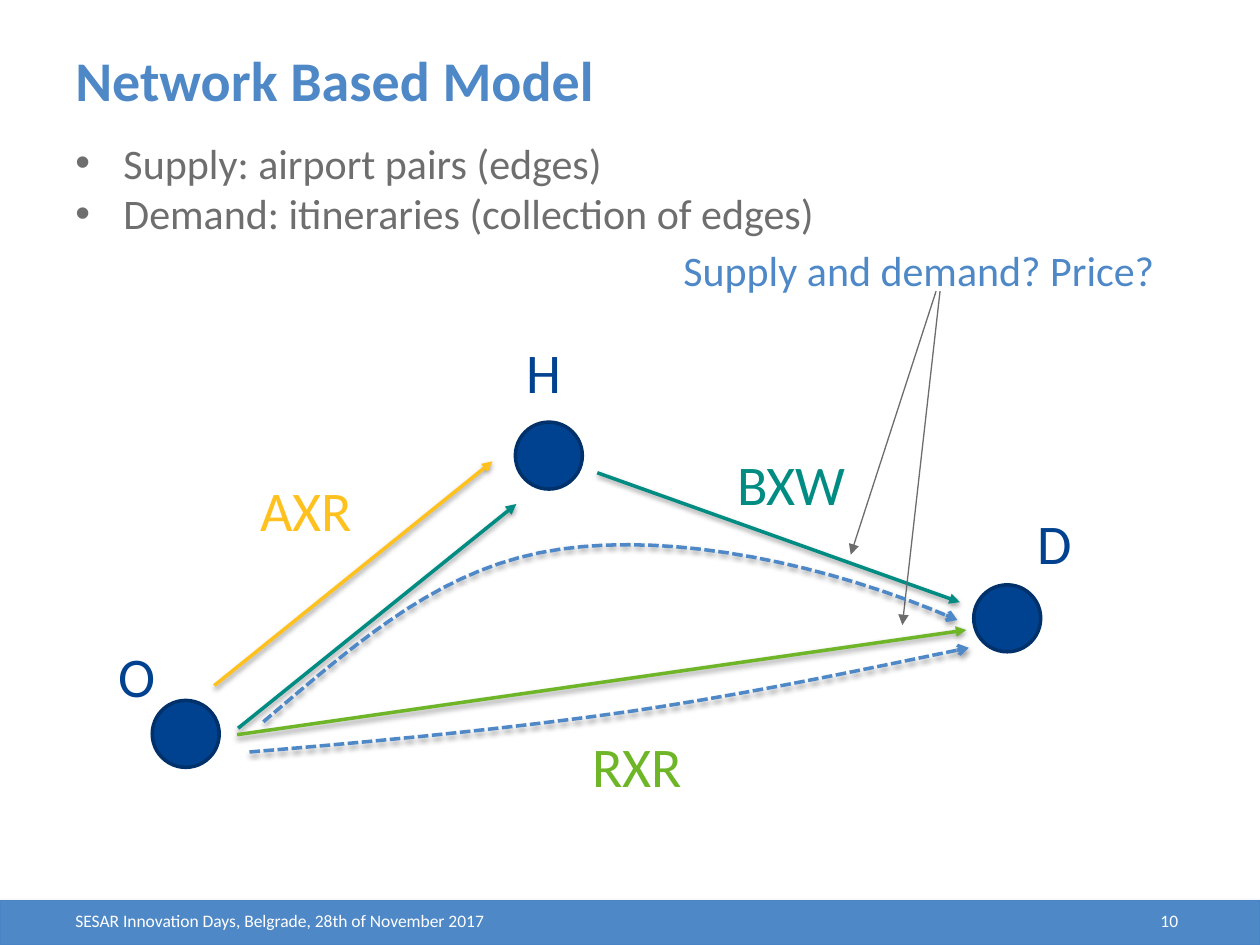
import pptx
import pptx.dml.color
import pptx.enum.dml
import pptx.enum.shapes
import pptx.enum.text
import pptx.oxml.ns
import pptx.util
from lxml import etree

Cm = pptx.util.Cm
Pt = pptx.util.Pt
RGB = pptx.dml.color.RGBColor
qn = pptx.oxml.ns.qn
SHAPE = pptx.enum.shapes.MSO_SHAPE
ALIGN = pptx.enum.text.PP_ALIGN
ANCHOR = pptx.enum.text.MSO_ANCHOR

FONT = "Calibri"
BLUE = RGB(0x4E, 0x88, 0xC7)
BAND_EDGE = RGB(0x49, 0x85, 0xC6)
NAVY = RGB(0x00, 0x42, 0x8F)
NAVY_EDGE = RGB(0x00, 0x31, 0x6A)
YELLOW = RGB(0xFF, 0xC1, 0x1E)
TEAL = RGB(0x00, 0x8C, 0x82)
GREEN = RGB(0x6E, 0xB6, 0x28)
GREY = RGB(0x6E, 0x6E, 0x6E)
POINTER = RGB(0x6C, 0x6C, 0x6C)
WHITE = RGB(0xFF, 0xFF, 0xFF)
BLACK = RGB(0x00, 0x00, 0x00)


def add_text(s, box, lines, size, color, bold=False, align=ALIGN.LEFT,
             anchor=ANCHOR.TOP, bullet=None):
    """Add a text box with one paragraph per line."""
    tf = s.shapes.add_textbox(*map(Cm, box)).text_frame
    tf.word_wrap = True
    tf.vertical_anchor = anchor
    for i, line in enumerate(lines):
        p = tf.add_paragraph() if i else tf.paragraphs[0]
        p.alignment = align
        if bullet:
            pPr = p._p.get_or_add_pPr()
            pPr.set("marL", str(Cm(0.97)))
            pPr.set("indent", str(-Cm(0.97)))
            etree.SubElement(pPr, qn("a:buFont"), typeface="Arial")
            etree.SubElement(pPr, qn("a:buChar"), char=bullet)
        r = p.add_run()
        r.text = line
        r.font.name = FONT
        r.font.size = Pt(size)
        r.font.bold = bold
        r.font.color.rgb = color


def set_effects(sp, alpha=None, dist=1.6):
    """Replace the theme shadow by none, or by a soft one falling downwards."""
    spPr = sp._element.spPr
    effects = etree.SubElement(spPr, qn("a:effectLst"))
    if alpha:
        shadow = etree.SubElement(effects, qn("a:outerShdw"), blurRad=str(Pt(3.1)),
                                  dist=str(Pt(dist)), dir="5400000", rotWithShape="0")
        color = etree.SubElement(shadow, qn("a:srgbClr"), val=str(BLACK))
        etree.SubElement(color, qn("a:alpha"), val=str(alpha * 1000))


def add_solid(s, kind, box, fill, edge, width, alpha=None, dist=1.6):
    """Add a filled and outlined preset shape."""
    sp = s.shapes.add_shape(kind, *map(Cm, box))
    sp.fill.solid()
    sp.fill.fore_color.rgb = fill
    sp.line.color.rgb = edge
    sp.line.width = Pt(width)
    set_effects(sp, alpha, dist)


def style_arrow(sp, color, width, head, alpha=None):
    """Give a line its colour, width, arrowhead and shadow."""
    sp.line.color.rgb = color
    sp.line.width = Pt(width)
    etree.SubElement(sp.line._get_or_add_ln(), qn("a:tailEnd"), type=head)
    set_effects(sp, alpha)


def add_arrow(s, start, end, color, width=2, alpha=38):
    """Add a straight arrow."""
    sp = s.shapes.add_connector(pptx.enum.shapes.MSO_CONNECTOR.STRAIGHT,
                                *map(Cm, start + end))
    style_arrow(sp, color, width, "triangle", alpha)


def bezier_points(nodes, steps=16):
    """Return points along a chain of cubic curves, without the first node."""
    points = []
    for i in range(0, len(nodes) - 1, 3):
        a, b, c, d = nodes[i:i + 4]
        for t in (k / steps for k in range(1, steps + 1)):
            u = 1 - t
            points.append(tuple(
                Cm(u**3 * a[n] + 3 * u * u * t * b[n] + 3 * u * t * t * c[n] + t**3 * d[n])
                for n in (0, 1)))
    return points


def add_itinerary(s, nodes):
    """Add a dashed curved arrow."""
    builder = s.shapes.build_freeform(Cm(nodes[0][0]), Cm(nodes[0][1]))
    builder.add_line_segments(bezier_points(nodes), close=False)
    sp = builder.convert_to_shape()
    sp.fill.background()
    sp.line.dash_style = pptx.enum.dml.MSO_LINE.SQUARE_DOT
    style_arrow(sp, BLUE, 2, "arrow", 38)


def main():
    """Build the network model slide."""
    prs = pptx.Presentation()
    prs.slide_width, prs.slide_height = Cm(25.4), Cm(19.05)
    s = prs.slides.add_slide(prs.slide_layouts[6])

    add_solid(s, SHAPE.RECTANGLE, (0, 18.16, 25.4, 0.89), BLUE, BAND_EDGE, 0.75, 35, 1.8)
    add_text(s, (1.27, 0.79, 18.49, 3.18), ["Network Based Model"], 32, BLUE, bold=True)
    add_text(s, (1.27, 18.21, 10.82, 0.71),
             ["SESAR Innovation Days, Belgrade, 28th of November 2017"],
             10, WHITE, anchor=ANCHOR.MIDDLE)
    add_text(s, (18.08, 18.21, 5.92, 0.71), ["10"], 10, WHITE,
             align=ALIGN.RIGHT, anchor=ANCHOR.MIDDLE)
    add_text(s, (1.27, 2.64, 23.42, 2.31),
             ["Supply: airport pairs (edges)", "Demand: itineraries (collection of edges)"],
             24, GREY, bullet="•")

    for x, y in ((3.07, 14.12), (10.39, 8.51), (19.63, 11.79)):
        add_solid(s, SHAPE.OVAL, (x, y, 1.35, 1.35), NAVY, NAVY_EDGE, 2)

    for start, end, color in (
        ((4.32, 13.82), (9.93, 9.3), YELLOW),
        ((4.8, 14.68), (10.41, 10.16), TEAL),
        ((12.04, 9.53), (19.35, 12.14), TEAL),
        ((4.78, 14.81), (19.48, 12.7), GREEN),
    ):
        add_arrow(s, start, end, color)

    for label, x, y, width, color in (
        ("O", 1.93, 12.8, 1.68, NAVY),
        ("H", 10.13, 6.68, 1.68, NAVY),
        ("D", 20.42, 10.13, 1.68, NAVY),
        ("AXR", 3.73, 9.47, 4.88, YELLOW),
        ("BXW", 13.51, 8.94, 4.88, TEAL),
        ("RXR", 10.41, 14.63, 4.88, GREEN),
    ):
        add_text(s, (x, y, width, 1.63), [label], 32, color, align=ALIGN.CENTER)

    add_text(s, (11.07, 4.8, 14.91, 1.27), ["Supply and demand? Price?"], 24, BLUE,
             align=ALIGN.CENTER)
    add_arrow(s, (18.87, 5.87), (17.15, 11.18), POINTER, 0.75, None)
    add_arrow(s, (18.95, 5.87), (18.19, 12.6), POINTER, 0.75, None)

    add_itinerary(s, [(5.31, 14.55), (7.37, 12.8), (8.97, 11.4), (11.3, 11.07),
                      (13.61, 10.74), (16.66, 11.35), (19.3, 12.5)])
    add_itinerary(s, [(5.03, 15.16), (7.7, 14.94), (10.36, 14.68), (12.78, 14.33),
                      (15.19, 13.97), (17.35, 13.51), (19.53, 13.06)])
    prs.save("out.pptx")


if __name__ == "__main__":
    main()
